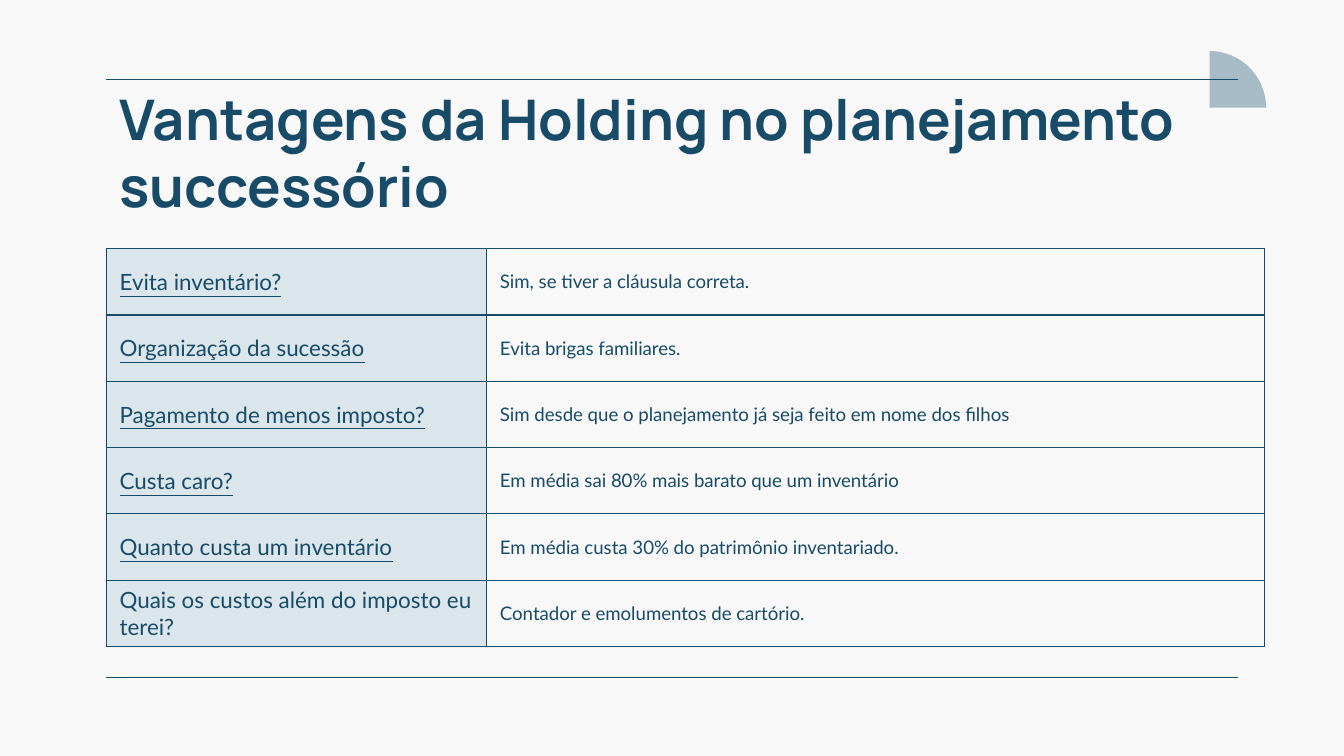
"""Builds a slide on the advantages of a holding in succession planning."""
import pptx
import pptx.dml.color
import pptx.enum.shapes
import pptx.enum.text
import pptx.oxml
import pptx.oxml.ns
import pptx.util
from pptx.util import Inches

TITLE = "Vantagens da Holding no planejamento successório"
ROWS = [
    ("Evita inventário?", "Sim, se tiver a cláusula correta."),
    ("Organização da sucessão", "Evita brigas familiares."),
    ("Pagamento de menos imposto?", "Sim desde que o planejamento já seja feito em nome dos filhos"),
    ("Custa caro?", "Em média sai 80% mais barato que um inventário"),
    ("Quanto custa um inventário", "Em média custa 30% do patrimônio inventariado."),
    ("Quais os custos além do imposto eu terei?", "Contador e emolumentos de cartório."),
]
COLORS = {"page": "F8F8F8", "navy": "174B67", "label": "DAE6EC", "accent": "A7BBC7"}
SLIDE_WIDTH = 10
SLIDE_HEIGHT = SLIDE_WIDTH * 9 / 16
COLUMN_WIDTHS = (2.83, 5.79)
LEFT, RIGHT = 0.79, 9.21
RULE_TOPS = (0.59, 5.04)
TABLE_TOP, TABLE_HEIGHT = 1.85, 2.96
BORDER_WIDTH = 0.75


def rgb(name):
    return pptx.dml.color.RGBColor.from_string(COLORS[name])


def style_font(font, name, size, bold=False, underline=False):
    font.name = name
    font.size = pptx.util.Pt(size)
    font.bold = bold
    font.underline = underline
    font.color.rgb = rgb("navy")


def add_wedge(slide):
    wedge = slide.shapes.add_shape(
        pptx.enum.shapes.MSO_SHAPE.PIE_WEDGE, Inches(9), Inches(0.38), Inches(0.42), Inches(0.42))
    wedge.rotation = 90
    wedge.shadow.inherit = False
    wedge.fill.solid()
    wedge.fill.fore_color.rgb = rgb("accent")
    wedge.line.fill.background()


def add_rule(slide, top):
    rule = slide.shapes.add_connector(
        pptx.enum.shapes.MSO_CONNECTOR.STRAIGHT, Inches(LEFT), Inches(top), Inches(RIGHT), Inches(top))
    rule.line.color.rgb = rgb("navy")
    rule.line.width = pptx.util.Pt(BORDER_WIDTH)
    properties = rule._element.spPr
    properties.append(properties.makeelement(pptx.oxml.ns.qn("a:effectLst"), {}))


def format_title(title):
    title.left, title.top = Inches(LEFT), Inches(0.53)
    title.width, title.height = Inches(8.43), Inches(0.97)
    frame = title.text_frame
    frame.text = TITLE
    frame.word_wrap = True
    frame.auto_size = pptx.enum.text.MSO_AUTO_SIZE.NONE
    frame.vertical_anchor = pptx.enum.text.MSO_ANCHOR.TOP
    frame.margin_left = frame.margin_right = frame.margin_top = frame.margin_bottom = Inches(0.1)
    paragraph = frame.paragraphs[0]
    paragraph.alignment = pptx.enum.text.PP_ALIGN.LEFT
    style_font(paragraph.font, "Manrope", 30, bold=True)


def add_borders(cell):
    properties = cell._tc.get_or_add_tcPr()
    for position, side in enumerate(("lnL", "lnR", "lnT", "lnB")):
        properties.insert(position, pptx.oxml.parse_xml(
            f'<a:{side} {pptx.oxml.ns.nsdecls("a")} w="{pptx.util.Pt(BORDER_WIDTH)}"><a:solidFill>'
            f'<a:srgbClr val="{COLORS["navy"]}"/></a:solidFill></a:{side}>'))


def fill_cell(cell, text, is_label, underline):
    cell.text = text
    cell.vertical_anchor = pptx.enum.text.MSO_ANCHOR.MIDDLE
    cell.margin_left = cell.margin_right = Inches(0.1)
    cell.margin_top = cell.margin_bottom = 0
    style_font(cell.text_frame.paragraphs[0].font, "Lato", 12 if is_label else 10, underline=underline)
    if is_label:
        cell.fill.solid()
        cell.fill.fore_color.rgb = rgb("label")
    else:
        cell.fill.background()
    add_borders(cell)


def add_answers(slide):
    table = slide.shapes.add_table(
        len(ROWS), len(COLUMN_WIDTHS), Inches(LEFT), Inches(TABLE_TOP),
        Inches(sum(COLUMN_WIDTHS)), Inches(TABLE_HEIGHT)).table
    table.first_row = table.horz_banding = False
    for column, width in zip(table.columns, COLUMN_WIDTHS):
        column.width = Inches(width)
    for row_index, texts in enumerate(ROWS):
        for column_index, text in enumerate(texts):
            is_label = column_index == 0
            underline = is_label and row_index < len(ROWS) - 1
            fill_cell(table.cell(row_index, column_index), text, is_label, underline)


def main():
    presentation = pptx.Presentation()
    presentation.slide_width = Inches(SLIDE_WIDTH)
    presentation.slide_height = Inches(SLIDE_HEIGHT)
    slide = presentation.slides.add_slide(presentation.slide_layouts.get_by_name("Title Only"))
    slide.background.fill.solid()
    slide.background.fill.fore_color.rgb = rgb("page")
    add_wedge(slide)
    for top in RULE_TOPS:
        add_rule(slide, top)
    format_title(slide.shapes.title)
    add_answers(slide)
    presentation.save("out.pptx")


if __name__ == "__main__":
    main()
